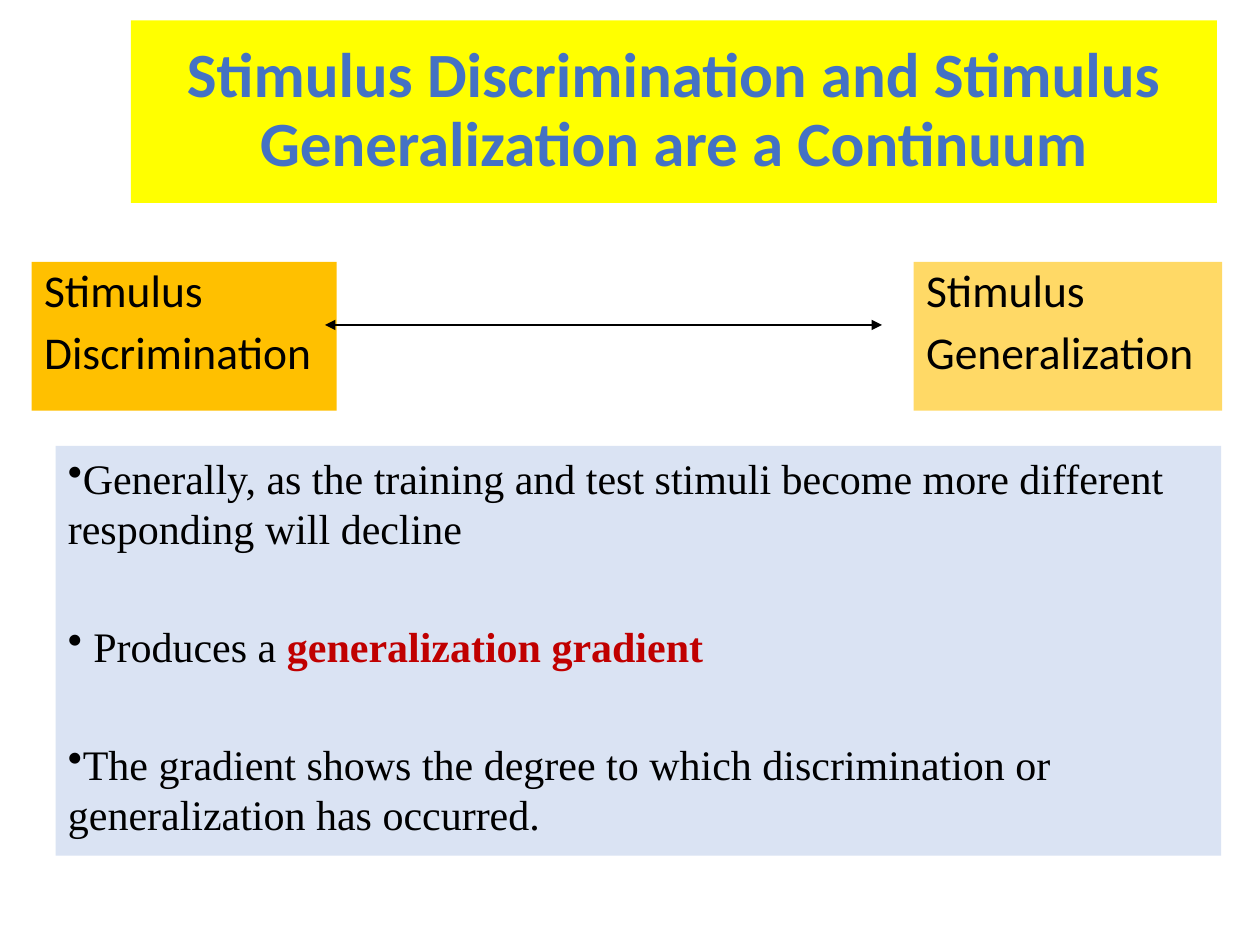
"""Build the slide on the stimulus discrimination and generalization continuum."""
from lxml import etree
from pptx import Presentation
from pptx import util as u
from pptx.dml.color import RGBColor
from pptx.enum import shapes, text
from pptx.oxml import ns

BLACK = RGBColor(0x00, 0x00, 0x00)
BLUE = RGBColor(0x44, 0x72, 0xC4)
RED = RGBColor(0xC0, 0x00, 0x00)
YELLOW = RGBColor(0xFF, 0xFF, 0x00)
AMBER = RGBColor(0xFF, 0xC0, 0x00)
LIGHT_AMBER = RGBColor(0xFF, 0xD9, 0x66)
PALE_BLUE = RGBColor(0xDA, 0xE3, 0xF3)


def add_text(paragraph, wording, font="Calibri", size=26, color=BLACK, bold=False):
    run = paragraph.add_run()
    run.text = wording
    run.font.name = font
    run.font.size = u.Pt(size)
    run.font.color.rgb = color
    run.font.bold = bold


class ContinuumSlide:
    def __init__(self, presentation):
        self.slide = presentation.slides.add_slide(presentation.slide_layouts[5])
        self.note_font = "Times New Roman"
        self.note_size = 24

    def prepare(self, shape, fill, anchor=text.MSO_ANCHOR.TOP):
        shape.fill.solid()
        shape.fill.fore_color.rgb = fill
        frame = shape.text_frame
        frame.word_wrap = True
        frame.auto_size = text.MSO_AUTO_SIZE.NONE
        frame.vertical_anchor = anchor
        return frame

    def paragraphs(self, frame, count):
        while len(frame.paragraphs) < count:
            frame.add_paragraph()
        return frame.paragraphs

    def title(self, wording, left, top, width, height):
        shape = self.slide.shapes.title
        shape.left, shape.top = u.Cm(left), u.Cm(top)
        shape.width, shape.height = u.Cm(width), u.Cm(height)
        frame = self.prepare(shape, YELLOW, text.MSO_ANCHOR.MIDDLE)
        paragraph = frame.paragraphs[0]
        paragraph.alignment = text.PP_ALIGN.CENTER
        paragraph.line_spacing = 0.9
        add_text(paragraph, wording, size=36, color=BLUE, bold=True)

    def box(self, fill, left, top, width, height):
        shape = self.slide.shapes.add_textbox(
            u.Cm(left), u.Cm(top), u.Cm(width), u.Cm(height))
        return self.prepare(shape, fill)

    def label(self, lines, fill, left, width):
        frame = self.box(fill, left, 5.28, width, 3)
        for paragraph, line in zip(self.paragraphs(frame, len(lines)), lines):
            paragraph.line_spacing = 0.9
            paragraph.space_before = u.Pt(7.5)
            add_text(paragraph, line)

    def bullets(self, items, left, top, width, height):
        frame = self.box(PALE_BLUE, left, top, width, height)
        for index, runs in enumerate(items):
            paragraph = self.paragraphs(frame, index + 1)[index]
            paragraph.space_before = u.Pt(38.5 if index else 5.5)
            properties = paragraph._p.get_or_add_pPr()
            etree.SubElement(properties, ns.qn("a:buChar"), char="•")
            for wording, style in runs:
                add_text(paragraph, wording, self.note_font, self.note_size, **style)

    def double_arrow(self, start, end, height):
        connector = self.slide.shapes.add_connector(
            shapes.MSO_CONNECTOR.STRAIGHT,
            u.Cm(start), u.Cm(height), u.Cm(end), u.Cm(height))
        connector.line.color.rgb = BLACK
        connector.line.width = u.Pt(0.75)
        line = connector.line._get_or_add_ln()
        for tag in ("a:headEnd", "a:tailEnd"):
            etree.SubElement(line, ns.qn(tag), type="triangle")
        etree.SubElement(connector._element.spPr, ns.qn("a:effectLst"))


def main():
    presentation = Presentation()
    presentation.slide_width, presentation.slide_height = u.Cm(25.4), u.Cm(19.05)
    page = ContinuumSlide(presentation)
    page.title("Stimulus Discrimination and Stimulus Generalization are a Continuum",
               2.64, 0.41, 21.89, 3.68)
    page.label(["Stimulus", "Discrimination"], AMBER, 0.64, 6.15)
    page.label(["Stimulus", "Generalization"], LIGHT_AMBER, 18.42, 6.22)
    page.double_arrow(6.55, 17.78, 6.55)
    page.bullets([
        [("Generally, as the training and test stimuli become more different "
          "responding will decline", {})],
        [(" Produces a ", {}),
         ("generalization gradient", {"color": RED, "bold": True})],
        [("The gradient shows the degree to which discrimination or "
          "generalization has occurred.", {})],
    ], 1.12, 8.99, 23.5, 8.26)
    presentation.save("out.pptx")


if __name__ == "__main__":
    main()
